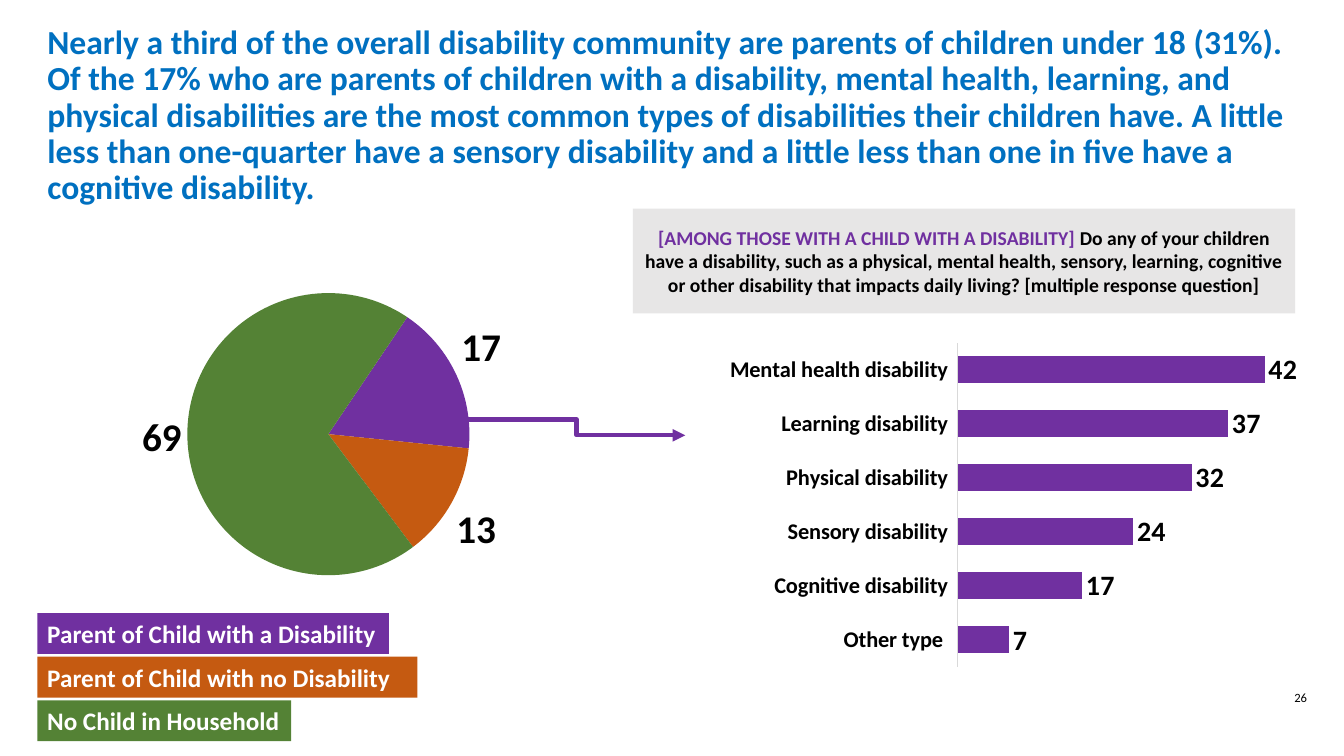
from dataclasses import dataclass

from lxml.etree import SubElement
from pptx import Presentation
from pptx.chart.chart import Chart
from pptx.chart.data import CategoryChartData
from pptx.dml.color import RGBColor
from pptx.enum.chart import XL_CHART_TYPE, XL_LABEL_POSITION, XL_TICK_LABEL_POSITION, XL_TICK_MARK
from pptx.enum.shapes import MSO_CONNECTOR, MSO_SHAPE
from pptx.enum.text import MSO_ANCHOR, MSO_AUTO_SIZE, PP_ALIGN
from pptx.oxml.ns import qn
from pptx.shapes.autoshape import Shape
from pptx.slide import Slide
from pptx.text.text import Font, _Paragraph
from pptx.util import Cm, Pt

PURPLE = RGBColor(0x70, 0x30, 0xA0)
ORANGE = RGBColor(0xC5, 0x5A, 0x11)
GREEN = RGBColor(0x54, 0x82, 0x35)
BLUE = RGBColor(0x00, 0x70, 0xC0)
GRAY = RGBColor(0xE7, 0xE6, 0xE6)
AXIS_GRAY = RGBColor(0xD9, 0xD9, 0xD9)
BLACK = RGBColor(0, 0, 0)
WHITE = RGBColor(0xFF, 0xFF, 0xFF)
FONT_NAME = "Calibri"


@dataclass(frozen=True)
class Box:
    left: float
    top: float
    width: float
    height: float

    def lengths(self) -> tuple[Cm, Cm, Cm, Cm]:
        return Cm(self.left), Cm(self.top), Cm(self.width), Cm(self.height)


@dataclass(frozen=True)
class ParentGroup:
    label: str
    percent: int
    color: RGBColor
    key_width: float


@dataclass(frozen=True)
class DisabilityType:
    label: str
    percent: int


PARENT_GROUPS = [
    ParentGroup("Parent of Child with a Disability", 17, PURPLE, 8.86),
    ParentGroup("Parent of Child with no Disability", 13, ORANGE, 9.58),
    ParentGroup("No Child in Household", 69, GREEN, 6.4),
]
DISABILITY_TYPES = [
    DisabilityType("Mental health disability", 42),
    DisabilityType("Learning disability", 37),
    DisabilityType("Physical disability", 32),
    DisabilityType("Sensory disability", 24),
    DisabilityType("Cognitive disability", 17),
    DisabilityType("Other type ", 7),
]
TITLE = (
    "Nearly a third of the overall disability community are parents of children under 18 (31%). "
    "Of the 17% who are parents of children with a disability, mental health, learning, and "
    "physical disabilities are the most common types of disabilities their children have. A little "
    "less than one-quarter have a sensory disability and a little less than one in five have a "
    "cognitive disability."
)
QUESTION = (
    "Do any of your children have a disability, such as a physical, mental health, sensory, "
    "learning, cognitive or other disability that impacts daily living? [multiple response question]"
)


def set_font(font: Font, size: float, color: RGBColor = BLACK, bold: bool = True) -> None:
    font.name = FONT_NAME
    font.size = Pt(size)
    font.bold = bold
    font.color.rgb = color


def add_run(paragraph: _Paragraph, text: str, size: float, color: RGBColor, bold: bool = True) -> None:
    run = paragraph.add_run()
    run.text = text
    set_font(run.font, size, color, bold)


def add_rectangle(slide: Slide, box: Box, color: RGBColor, alignment: PP_ALIGN) -> Shape:
    shape = slide.shapes.add_shape(MSO_SHAPE.RECTANGLE, *box.lengths())
    shape.shadow.inherit = False
    shape.fill.solid()
    shape.fill.fore_color.rgb = color
    shape.line.fill.background()
    shape.text_frame.word_wrap = True
    shape.text_frame.vertical_anchor = MSO_ANCHOR.MIDDLE
    shape.text_frame.paragraphs[0].alignment = alignment
    return shape


def add_chart(slide: Slide, chart_type: XL_CHART_TYPE, box: Box, categories: list[str],
              values: list[int], label_size: float, plot_area: Box) -> Chart:
    """Add a one-series chart; plot_area holds fractions of the chart's size."""
    chart_data = CategoryChartData()
    chart_data.categories = categories
    chart_data.add_series("Series 1", values)
    chart = slide.shapes.add_chart(chart_type, *box.lengths(), chart_data).chart
    chart.has_legend = False
    chart.has_title = False
    set_font(chart.font, 10, bold=False)
    plot = chart.plots[0]
    plot.vary_by_categories = False
    plot.has_data_labels = True
    labels = plot.data_labels
    labels.show_value = True
    labels.position = XL_LABEL_POSITION.OUTSIDE_END
    set_font(labels.font, label_size)

    # Fixed inner plot area
    plot_element = chart.element.find(".//" + qn("c:plotArea"))
    layout = plot_element.find(qn("c:layout"))
    if layout is None:
        layout = plot_element.makeelement(qn("c:layout"))
        plot_element.insert(0, layout)
    manual = SubElement(layout, qn("c:manualLayout"))
    settings = {"layoutTarget": "inner", "xMode": "edge", "yMode": "edge", "x": plot_area.left,
                "y": plot_area.top, "w": plot_area.width, "h": plot_area.height}
    for name, value in settings.items():
        SubElement(manual, qn(f"c:{name}"), val=str(value))
    return chart


def add_parent_pie(slide: Slide) -> None:
    chart = add_chart(slide, XL_CHART_TYPE.PIE, Box(1.8, 5.26, 12.7, 10.62), ["1", "2", "3"],
                      [group.percent for group in PARENT_GROUPS], 28, Box(0.23, 0.2, 0.56, 0.67))
    plot = chart.plots[0]
    for index, group in enumerate(PARENT_GROUPS):
        fill = plot.series[0].points[index].format.fill
        fill.solid()
        fill.fore_color.rgb = group.color
    pie = chart.element.find(".//" + qn("c:pieChart"))
    angle = pie.find(qn("c:firstSliceAng"))
    if angle is None:
        angle = SubElement(pie, qn("c:firstSliceAng"))
    angle.set("val", "34")


def add_disability_bars(slide: Slide) -> None:
    chart = add_chart(slide, XL_CHART_TYPE.BAR_CLUSTERED, Box(17.27, 8.38, 15.62, 8.69),
                      [kind.label for kind in DISABILITY_TYPES],
                      [kind.percent for kind in DISABILITY_TYPES], 20, Box(0.44, 0.03, 0.53, 0.94))
    plot = chart.plots[0]
    plot.gap_width = 100
    fill = plot.series[0].format.fill
    fill.solid()
    fill.fore_color.rgb = PURPLE
    category_axis = chart.category_axis
    category_axis.reverse_order = True
    category_axis.major_tick_mark = XL_TICK_MARK.NONE
    category_axis.tick_label_position = XL_TICK_LABEL_POSITION.LOW
    category_axis.format.line.color.rgb = AXIS_GRAY
    category_axis.format.line.width = Pt(0.75)
    set_font(category_axis.tick_labels.font, 16)
    value_axis = chart.value_axis
    value_axis.minimum_scale = 0
    value_axis.maximum_scale = 45
    value_axis.has_major_gridlines = False
    value_axis.visible = False


def add_arrow(slide: Slide) -> None:
    connector = slide.shapes.add_connector(
        MSO_CONNECTOR.ELBOW, Cm(11.79), Cm(10.57), Cm(17.27), Cm(10.97))
    connector.line.color.rgb = PURPLE
    connector.line.width = Pt(3)
    SubElement(connector.line._get_or_add_ln(), qn("a:tailEnd"), type="triangle")
    SubElement(connector._element.spPr, qn("a:effectLst"))


def main() -> None:
    presentation = Presentation()
    presentation.slide_width = Cm(33.87)
    presentation.slide_height = Cm(19.05)
    slide = presentation.slides.add_slide(presentation.slide_layouts[5])

    # Title
    title = slide.shapes.title
    title.left, title.top, title.width, title.height = Box(0.94, 1.09, 31.95, 3.68).lengths()
    title.text_frame.word_wrap = True
    title.text_frame.auto_size = MSO_AUTO_SIZE.NONE
    title.text_frame.vertical_anchor = MSO_ANCHOR.MIDDLE
    paragraph = title.text_frame.paragraphs[0]
    paragraph.alignment = PP_ALIGN.LEFT
    paragraph.line_spacing = 0.9
    add_run(paragraph, TITLE, 24, BLUE)

    # Charts and survey question
    add_disability_bars(slide)
    question = add_rectangle(slide, Box(15.95, 5.26, 16.69, 2.64), GRAY, PP_ALIGN.CENTER)
    paragraph = question.text_frame.paragraphs[0]
    add_run(paragraph, "[AMONG THOSE WITH A CHILD WITH A DISABILITY] ", 14, PURPLE)
    add_run(paragraph, QUESTION, 14, BLACK)
    add_parent_pie(slide)

    # Color key for the pie
    for index, group in enumerate(PARENT_GROUPS):
        key = add_rectangle(slide, Box(0.94, 15.45 + 1.1 * index, group.key_width, 1.03),
                            group.color, PP_ALIGN.LEFT)
        add_run(key.text_frame.paragraphs[0], group.label, 18, WHITE)

    add_arrow(slide)

    # Slide number
    number = slide.shapes.add_textbox(*Box(31.83, 17.15, 1.9, 0.84).lengths())
    number.text_frame.word_wrap = True
    number.text_frame.vertical_anchor = MSO_ANCHOR.MIDDLE
    paragraph = number.text_frame.paragraphs[0]
    paragraph.alignment = PP_ALIGN.CENTER
    add_run(paragraph, "26", 9, BLACK, bold=False)

    presentation.save("out.pptx")


if __name__ == "__main__":
    main()
